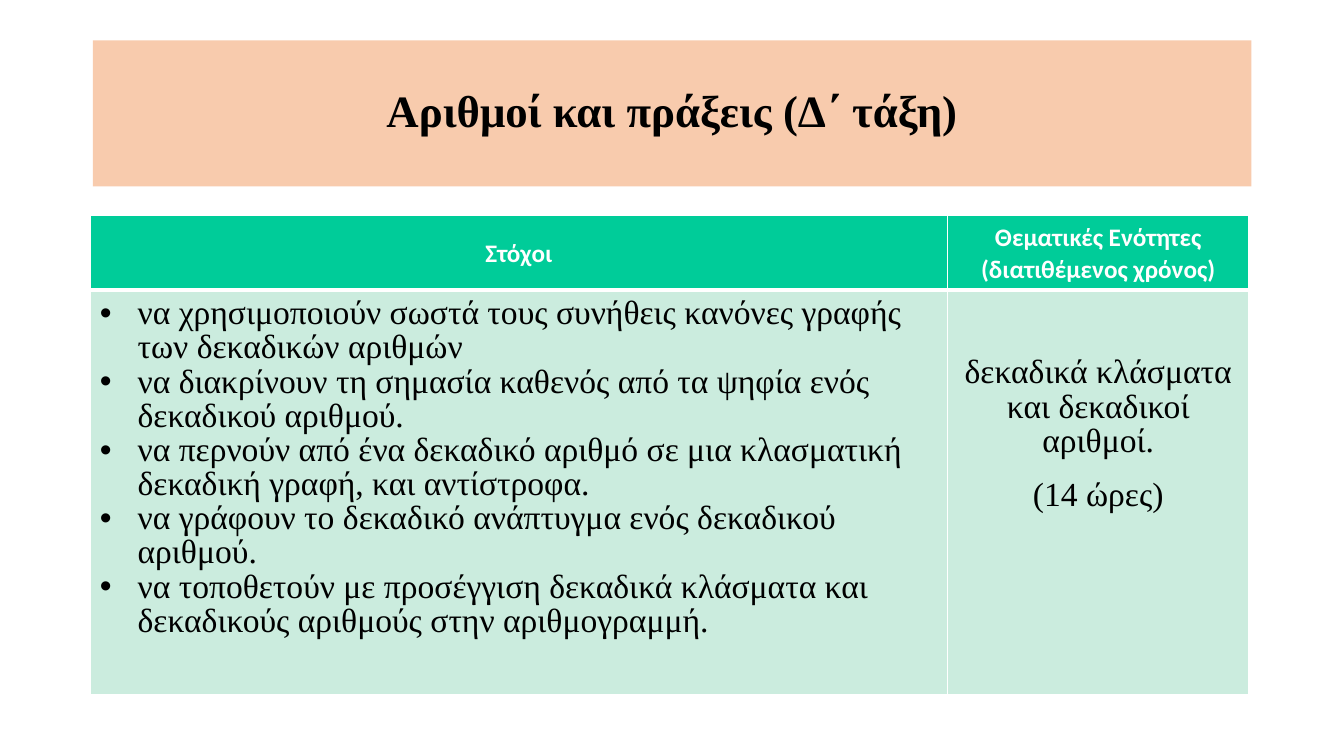
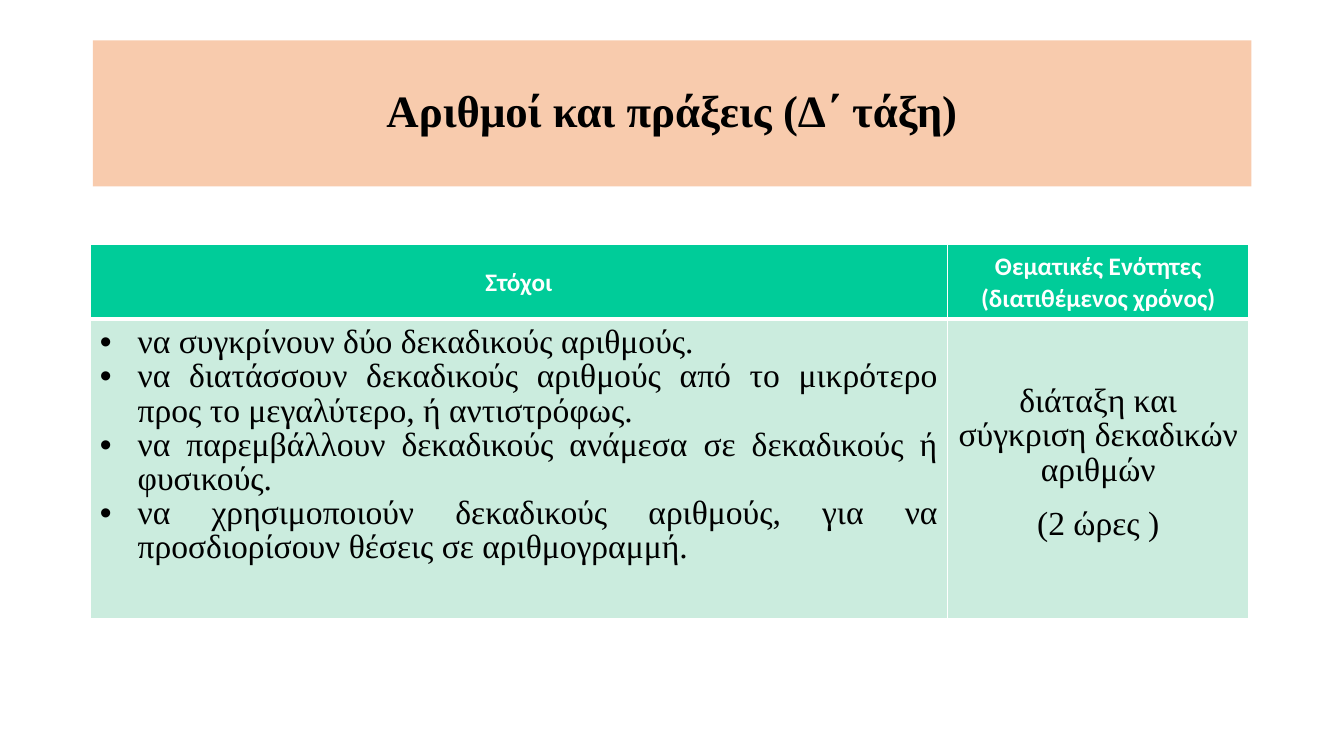
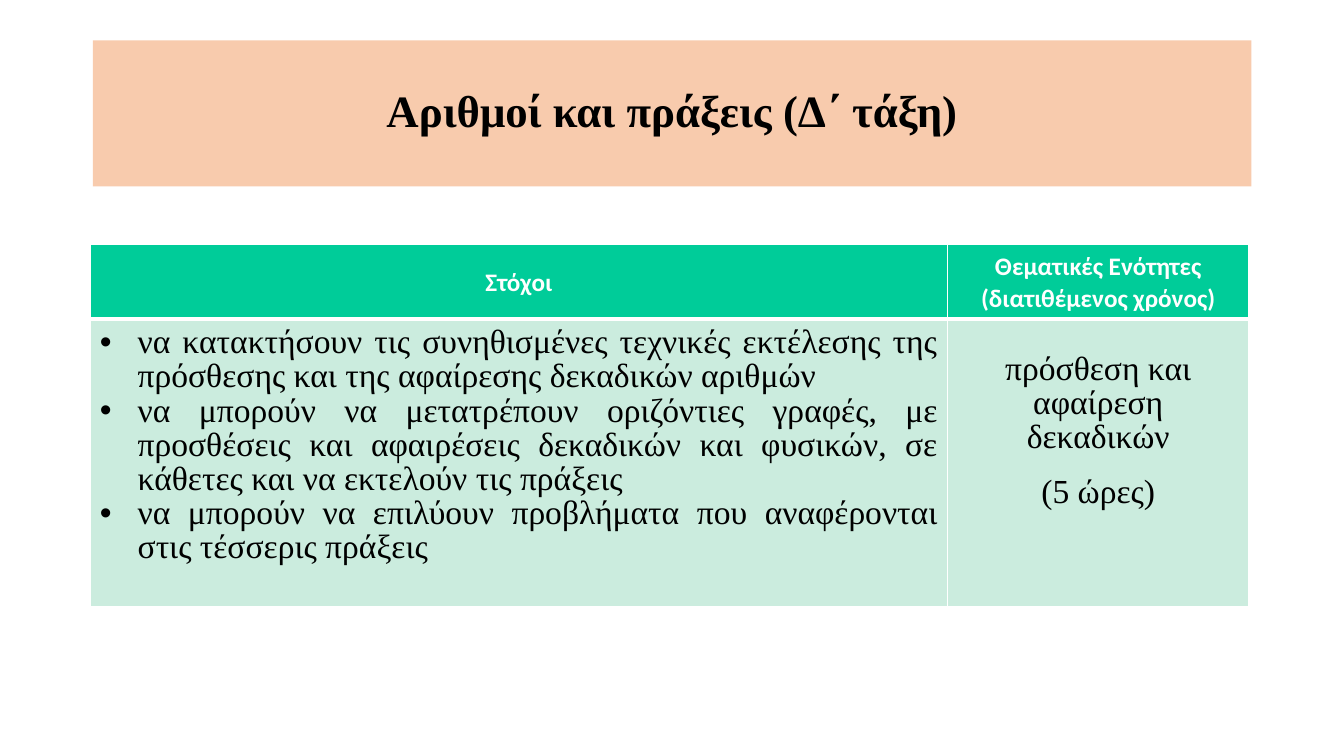
from dataclasses import dataclass

from pptx import Presentation
from pptx.dml.color import RGBColor
from pptx.enum.shapes import MSO_SHAPE
from pptx.enum.text import MSO_ANCHOR, PP_ALIGN
from pptx.oxml import parse_xml
from pptx.oxml.ns import nsdecls
from pptx.util import Cm, Pt


@dataclass(frozen=True)
class Theme:
    band: RGBColor = RGBColor(0xF8, 0xCB, 0xAD)
    head: RGBColor = RGBColor(0x00, 0xCC, 0x99)
    body: RGBColor = RGBColor(0xCB, 0xEC, 0xDE)
    ink: RGBColor = RGBColor(0x00, 0x00, 0x00)
    white: RGBColor = RGBColor(0xFF, 0xFF, 0xFF)
    serif: str = "Times New Roman"
    sans: str = "Calibri"
    title_size: Pt = Pt(32)
    head_size: Pt = Pt(18)
    body_size: Pt = Pt(24)
    thin: Pt = Pt(0.91)
    thick: Pt = Pt(2.95)


T = Theme()

# Text formats: paragraph settings and font settings
TITLE = ({"alignment": PP_ALIGN.CENTER, "line_spacing": 0.9},
         {"name": T.serif, "size": T.title_size, "bold": True}, T.ink)
HEAD = ({"alignment": PP_ALIGN.CENTER, "line_spacing": 1.04},
        {"name": T.sans, "size": T.head_size, "bold": True}, T.white)
BODY_FONT = {"name": T.serif, "size": T.body_size, "bold": False}
TOPIC = ({"alignment": PP_ALIGN.CENTER, "line_spacing": 0.92, "space_after": Pt(14.2)},
         BODY_FONT, T.ink)

# Content
TITLE_TEXT = "Αριθμοί και πράξεις (Δ΄ τάξη)"
HEADINGS = [["Στόχοι"], ["Θεματικές Ενότητες", "(διατιθέμενος χρόνος)"]]
SLIDES = [
    {"top": 5.44, "height": 10.18, "align": PP_ALIGN.LEFT, "topic_drop": 2,
     "goals": [
         "να χρησιμοποιούν σωστά τους συνήθεις κανόνες γραφής των δεκαδικών αριθμών",
         "να διακρίνουν τη σημασία καθενός από τα ψηφία ενός δεκαδικού αριθμού.",
         "να περνούν από ένα δεκαδικό αριθμό σε μια κλασματική δεκαδική γραφή, και αντίστροφα.",
         "να γράφουν το δεκαδικό ανάπτυγμα ενός δεκαδικού αριθμού.",
         "να τοποθετούν με προσέγγιση δεκαδικά κλάσματα και δεκαδικούς αριθμούς στην αριθμογραμμή."],
     "topic": ["δεκαδικά κλάσματα και δεκαδικοί αριθμοί.", "(14 ώρες)"]},
    {"top": 6.17, "height": 7.55, "align": PP_ALIGN.JUSTIFY, "topic_drop": 2,
     "goals": [
         "να συγκρίνουν δύο δεκαδικούς αριθμούς.",
         "να διατάσσουν δεκαδικούς αριθμούς από το μικρότερο προς το μεγαλύτερο, ή αντιστρόφως.",
         "να παρεμβάλλουν δεκαδικούς ανάμεσα σε δεκαδικούς ή φυσικούς.",
         "να χρησιμοποιούν δεκαδικούς αριθμούς, για να προσδιορίσουν θέσεις σε αριθμογραμμή."],
     "topic": ["διάταξη και σύγκριση δεκαδικών αριθμών", "(2 ώρες )"]},
    {"top": 6.17, "height": 7.24, "align": PP_ALIGN.JUSTIFY, "topic_drop": 1,
     "goals": [
         "να κατακτήσουν τις συνηθισμένες τεχνικές εκτέλεσης της πρόσθεσης και της αφαίρεσης δεκαδικών αριθμών",
         "να μπορούν να μετατρέπουν οριζόντιες γραφές, με προσθέσεις και αφαιρέσεις δεκαδικών και φυσικών, σε κάθετες και να εκτελούν τις πράξεις",
         "να μπορούν να επιλύουν προβλήματα που αναφέρονται στις τέσσερις πράξεις"],
     "topic": ["πρόσθεση και αφαίρεση δεκαδικών", "(5 ώρες)"]},
]
HEAD_HEIGHT = 1.87
COLUMNS = [21.62, 7.59]


def write(tf, lines, style, bullet=False):
    para_format, font_format, color = style
    for i, line in enumerate(lines):
        p = tf.paragraphs[0] if i == 0 else tf.add_paragraph()
        for key, value in para_format.items():
            setattr(p, key, value)
        if bullet:
            pPr = p._p.get_or_add_pPr()
            pPr.set("marL", str(Cm(0.95)))
            pPr.set("indent", str(-Cm(0.95)))
            for tag in ('buFont {} typeface="Arial"', 'buChar {} char="•"'):
                pPr.append(parse_xml(f"<a:{tag.format(nsdecls('a'))}/>"))
        r = p.add_run()
        r.text = line
        for key, value in font_format.items():
            setattr(r.font, key, value)
        r.font.color.rgb = color


def dress(cell, fill, top, bottom, inset_top=0.13):
    cell.fill.solid()
    cell.fill.fore_color.rgb = fill
    for side, value in {"left": 0.25, "right": 0.25, "top": inset_top, "bottom": 0.13}.items():
        setattr(cell, f"margin_{side}", Cm(value))
    tcPr = cell._tc.get_or_add_tcPr()
    borders = {"lnL": T.thin, "lnR": T.thin, "lnT": top, "lnB": bottom}
    for i, (tag, width) in enumerate(borders.items()):
        tcPr.insert(i, parse_xml(
            f'<a:{tag} {nsdecls("a")} w="{int(width)}"><a:solidFill>'
            f'<a:srgbClr val="{T.white}"/></a:solidFill></a:{tag}>'))


prs = Presentation()
prs.slide_width, prs.slide_height = Cm(33.88), Cm(19.05)

for content in SLIDES:
    s = prs.slides.add_slide(prs.slide_layouts[6])

    # Title band
    sp = s.shapes.add_shape(MSO_SHAPE.RECTANGLE, Cm(2.34), Cm(1.02), Cm(29.21), Cm(3.68))
    sp.shadow.inherit = False
    sp.fill.solid()
    sp.fill.fore_color.rgb = T.band
    sp.line.fill.background()
    sp.text_frame.word_wrap = True
    sp.text_frame.vertical_anchor = MSO_ANCHOR.MIDDLE
    write(sp.text_frame, [TITLE_TEXT], TITLE)

    # Table grid
    heights = [HEAD_HEIGHT, content["height"]]
    table = s.shapes.add_table(2, 2, Cm(2.27), Cm(content["top"]),
                               Cm(sum(COLUMNS)), Cm(sum(heights))).table
    table.horz_banding = False
    for column, width in zip(table.columns, COLUMNS):
        column.width = Cm(width)
    for row, height in zip(table.rows, heights):
        row.height = Cm(height)

    # Heading row
    for cell, lines in zip(table.rows[0].cells, HEADINGS):
        dress(cell, T.head, T.thin, T.thick)
        cell.vertical_anchor = MSO_ANCHOR.MIDDLE
        write(cell.text_frame, lines, HEAD)

    # Goals and topic
    goals, topic = table.rows[1].cells
    goal_style = ({"alignment": content["align"], "line_spacing": 0.92}, BODY_FONT, T.ink)
    dress(goals, T.body, T.thick, T.thin, 0.18)
    write(goals.text_frame, content["goals"], goal_style, bullet=True)
    dress(topic, T.body, T.thick, T.thin, 0.05 + 0.81 * content["topic_drop"])
    write(topic.text_frame, content["topic"], TOPIC)

prs.save("out.pptx")
